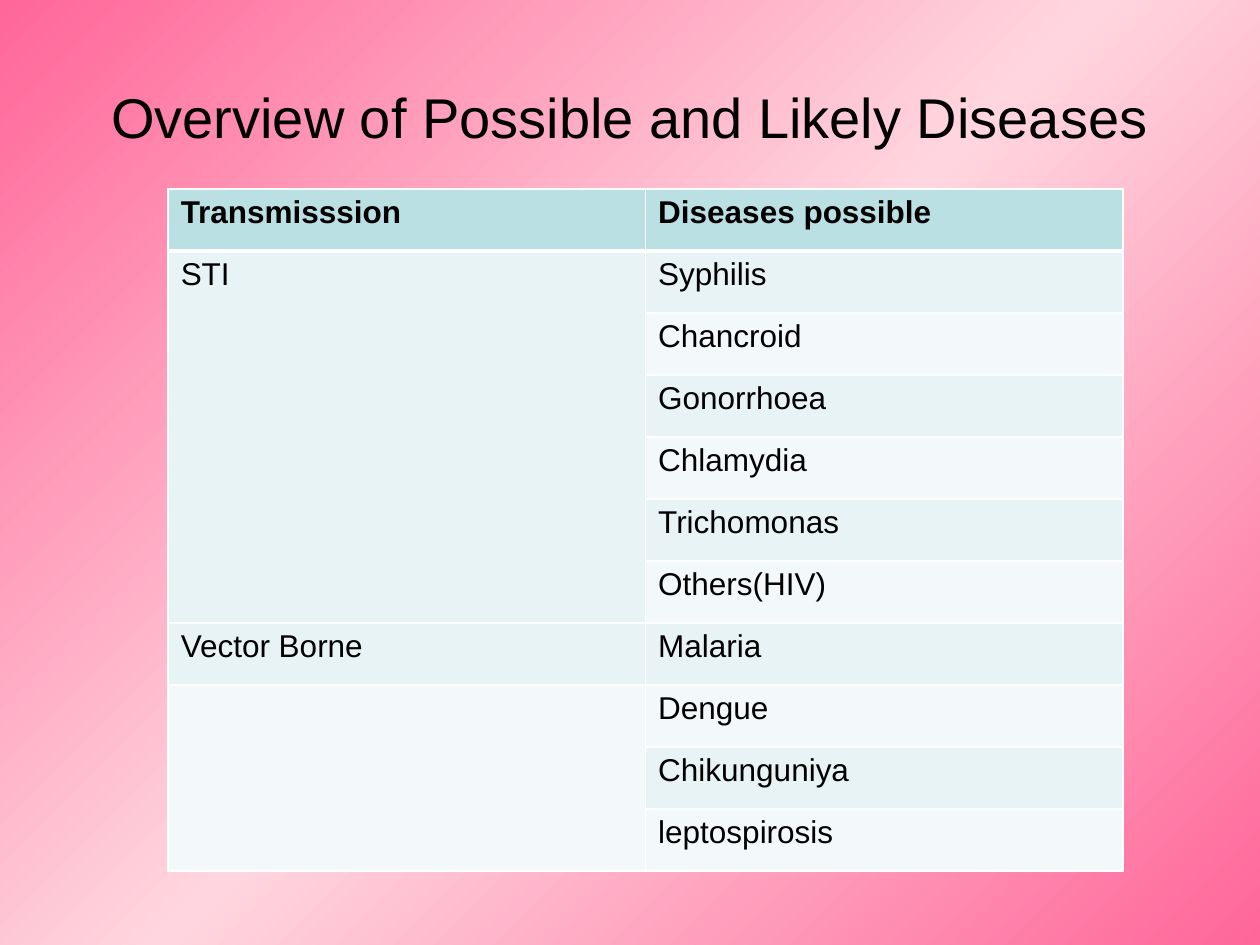
from copy import deepcopy

from lxml import etree
from pptx import Presentation
from pptx.dml.color import RGBColor
from pptx.enum.text import MSO_ANCHOR, PP_ALIGN
from pptx.oxml.ns import qn
from pptx.util import Cm, Pt

MIDDLE = MSO_ANCHOR.MIDDLE
LEFT, CENTER = PP_ALIGN.LEFT, PP_ALIGN.CENTER

COLORS = {
    "edge": "FF6699",
    "glow": "FFD6DF",
    "text": "000000",
    "header": "BBE0E3",
    "odd": "E7F3F4",
    "even": "F3F9FA",
    "border": "FFFFFF",
}
ROWS = [
    ("Transmisssion", "Diseases possible"),
    ("STI", "Syphilis"),
    ("", "Chancroid"),
    ("", "Gonorrhoea"),
    ("", "Chlamydia"),
    ("", "Trichomonas"),
    ("", "Others(HIV)"),
    ("Vector Borne", "Malaria"),
    ("", "Dengue"),
    ("", "Chikunguniya"),
    ("", "leptospirosis"),
]
MERGES = [(1, 6), (8, 10)]


def write(tf, text, size=18, bold=False, align=LEFT):
    p = tf.paragraphs[0]
    p.alignment = align
    r = p.add_run()
    r.text = text
    r.font.name = "Arial"
    r.font.size = Pt(size)
    r.font.bold = bold
    r.font.color.rgb = RGBColor.from_string(COLORS["text"])


def set_borders(cell, top, bottom):
    """Draw the four cell borders; top and bottom are widths in points."""
    tcPr = cell._tc.get_or_add_tcPr()
    widths = {"a:lnL": 1, "a:lnR": 1, "a:lnT": top, "a:lnB": bottom}
    for i, (tag, width) in enumerate(widths.items()):
        ln = etree.Element(qn(tag), w=str(Pt(width)))
        fill = etree.SubElement(ln, qn("a:solidFill"))
        etree.SubElement(fill, qn("a:srgbClr"), val=COLORS["border"])
        tcPr.insert(i, ln)


prs = Presentation()
prs.slide_width, prs.slide_height = Cm(25.4), Cm(19.05)
s = prs.slides.add_slide(prs.slide_layouts[6])

# Background: diagonal gradient, light in the middle
fill = s.background.fill
fill.gradient()
fill.gradient_angle = 315
stops = next(s.element.iter(qn("a:gsLst")))
stops.insert(1, deepcopy(stops[0]))
for i, name in enumerate(("edge", "glow", "edge")):
    stop = fill.gradient_stops[i]
    stop.position = i / 2
    stop.color.rgb = RGBColor.from_string(COLORS[name])

# Title
tf = s.shapes.add_textbox(Cm(1.27), Cm(0.76), Cm(22.86), Cm(3.18)).text_frame
tf.word_wrap = True
tf.vertical_anchor = MIDDLE
write(tf, "Overview of Possible and Likely Diseases", size=32, align=CENTER)

# Table
table = s.shapes.add_table(
    len(ROWS), 2, Cm(3.39), Cm(3.81), Cm(19.25), Cm(13.75)
).table
for row in table.rows:
    row.height = Cm(1.25)
for i, texts in enumerate(ROWS):
    band = "header" if i == 0 else "odd" if i % 2 else "even"
    for j, text in enumerate(texts):
        cell = table.cell(i, j)
        cell.fill.solid()
        cell.fill.fore_color.rgb = RGBColor.from_string(COLORS[band])
        set_borders(cell, top=3 if i == 1 else 1, bottom=3 if i == 0 else 1)
        if text:
            write(cell.text_frame, text, bold=i == 0)
for first, last in MERGES:
    table.cell(first, 0).merge(table.cell(last, 0))

prs.save("out.pptx")
